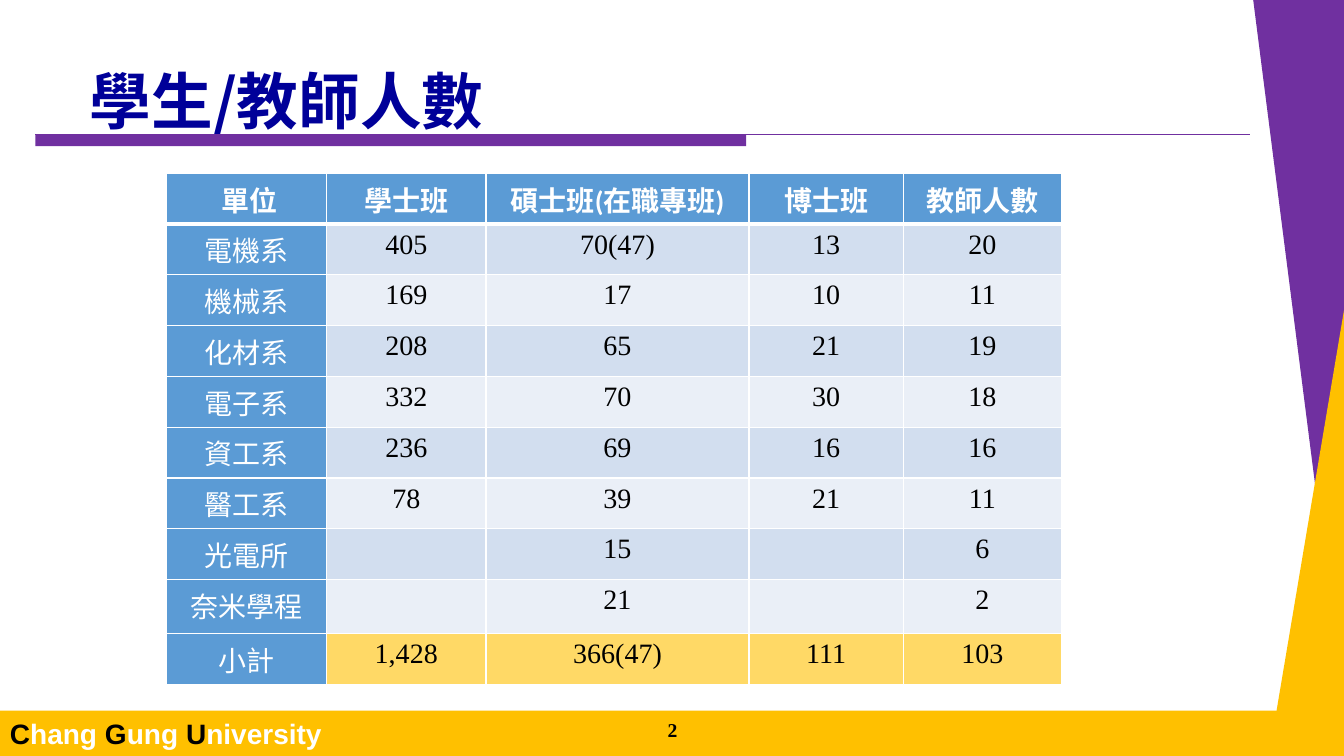
from lxml.etree import SubElement
from pptx import Presentation
from pptx.dml.color import RGBColor
from pptx.enum.shapes import MSO_CONNECTOR as CONN, MSO_SHAPE as SHAPE
from pptx.enum.text import MSO_ANCHOR as ANCHOR, PP_ALIGN as ALIGN
from pptx.oxml.ns import qn
from pptx.util import Inches, Pt

PURPLE = RGBColor(0x70, 0x30, 0xA0)
GOLD = RGBColor(0xFF, 0xC0, 0x00)
NAVY = RGBColor(0x00, 0x00, 0x99)
BLACK = RGBColor(0x00, 0x00, 0x00)
WHITE = RGBColor(0xFF, 0xFF, 0xFF)
BLUE = RGBColor(0x5B, 0x9B, 0xD5)
BAND_DARK = RGBColor(0xD2, 0xDE, 0xEF)
BAND_LIGHT = RGBColor(0xEA, 0xEF, 0xF7)
TOTAL = RGBColor(0xFF, 0xD9, 0x66)

CJK = "Noto Sans CJK SC"
SERIF = "Times New Roman"

COL_WIDTHS = [1.59, 1.58, 2.61, 1.53, 1.57]
ROW_HEIGHTS = [0.38] + [0.47] * 7 + [0.54, 0.47]
HEADCOUNT = [
    [" 單位", "學士班", "碩士班(在職專班)", "博士班", "教師人數"],
    ["電機系", "405", "70(47)", "13", "20"],
    ["機械系", "169", "17", "10", "11"],
    ["化材系", "208", "65", "21", "19"],
    ["電子系", "332", "70", "30", "18"],
    ["資工系", "236", "69", "16", "16"],
    ["醫工系", "78", "39", "21", "11"],
    ["光電所", "", "15", "", "6"],
    ["奈米學程", "", "21", "", "2"],
    ["小計", "1,428", "366(47)", "111", "103"],
]


def add_run(p, text, color, **font):
    r = p.add_run()
    r.text = text
    for name, value in font.items():
        setattr(r.font, name, value)
    r.font.color.rgb = color
    SubElement(r.font._element, qn("a:ea"), typeface=CJK)


def paint(s, color):
    s.fill.solid()
    s.fill.fore_color.rgb = color
    s.line.fill.background()
    s.shadow.inherit = False


def add_bar(slide, x, y, w, h, color):
    s = slide.shapes.add_shape(SHAPE.RECTANGLE, Inches(x), Inches(y),
                               Inches(w), Inches(h))
    paint(s, color)
    return s


def add_triangle(slide, points, color):
    start, *rest = [(Inches(x), Inches(y)) for x, y in points]
    builder = slide.shapes.build_freeform(*start)
    builder.add_line_segments(rest, close=True)
    paint(builder.convert_to_shape(), color)


def add_rule(slide, x1, x2, y):
    s = slide.shapes.add_connector(CONN.STRAIGHT, Inches(x1), Inches(y),
                                   Inches(x2), Inches(y))
    s.line.color.rgb = PURPLE
    s.line.width = Pt(0.75)
    SubElement(s._element.spPr, qn("a:effectLst"))


def add_footer(slide):
    tf = add_bar(slide, 0, 7.05, 13.33, 0.45, GOLD).text_frame
    tf.vertical_anchor = ANCHOR.MIDDLE
    p = tf.paragraphs[0]
    p.alignment = ALIGN.LEFT
    for word in ("Chang ", "Gung ", "University"):
        for text, color in ((word[0], BLACK), (word[1:], WHITE)):
            add_run(p, text, color, name="Arial", size=Pt(20), bold=True)


def add_page_number(slide, number):
    s = slide.shapes.add_textbox(Inches(5.29), Inches(7.07),
                                 Inches(2.76), Inches(0.28))
    tf = s.text_frame
    tf.word_wrap = True
    p = tf.paragraphs[0]
    p.alignment = ALIGN.CENTER
    add_run(p, number, BLACK, name=SERIF, size=Pt(14), bold=True)


def format_title(slide, text):
    s = slide.shapes.title
    box = {"left": 0.79, "top": 0.62, "width": 8.75, "height": 0.83}
    for name, value in box.items():
        setattr(s, name, Inches(value))
    tf = s.text_frame
    tf.vertical_anchor = ANCHOR.MIDDLE
    p = tf.paragraphs[0]
    p.alignment = ALIGN.LEFT
    p.line_spacing = 0.9
    add_run(p, text, NAVY, name=CJK, size=Pt(44), bold=True)


def add_borders(cell, row):
    """Thin white borders, with a thick one under the header row."""
    thick_side = {0: "B", 1: "T"}.get(row)
    for side in "LRTB":
        width = Pt(3 if side == thick_side else 1)
        ln = SubElement(cell._tc.get_or_add_tcPr(), qn(f"a:ln{side}"),
                        w=str(width))
        fill = SubElement(ln, qn("a:solidFill"))
        SubElement(fill, qn("a:srgbClr"), val=str(WHITE))


def cell_fill(row, col):
    if row == 0 or col == 0:
        return BLUE
    if row == len(HEADCOUNT) - 1:
        return TOTAL
    return BAND_DARK if row % 2 else BAND_LIGHT


def add_headcount_table(slide):
    table = slide.shapes.add_table(
        len(HEADCOUNT), len(COL_WIDTHS), Inches(1.65), Inches(1.72),
        Inches(sum(COL_WIDTHS)), Inches(sum(ROW_HEIGHTS))).table
    for column, width in zip(table.columns, COL_WIDTHS):
        column.width = Inches(width)
    for i, (values, height) in enumerate(zip(HEADCOUNT, ROW_HEIGHTS)):
        table.rows[i].height = Inches(height)
        for j, text in enumerate(values):
            cell = table.cell(i, j)
            add_borders(cell, i)
            cell.fill.solid()
            cell.fill.fore_color.rgb = cell_fill(i, j)
            if not text:
                continue
            p = cell.text_frame.paragraphs[0]
            p.alignment = ALIGN.CENTER
            heading = i == 0 or j == 0
            add_run(p, text, WHITE if heading else BLACK,
                    name="Calibri" if heading else SERIF,
                    size=Pt(20), bold=i == 0)


def main():
    prs = Presentation()
    prs.slide_width, prs.slide_height = Inches(13.33), Inches(7.5)
    slide = prs.slides.add_slide(prs.slide_layouts[5])
    add_footer(slide)
    add_triangle(slide, [(13.33, 7.05), (12.43, 0), (13.33, 0)], PURPLE)
    add_triangle(slide, [(13.33, 3.08), (12.66, 7.06), (13.33, 7.06)], GOLD)
    add_bar(slide, 0.35, 1.33, 7.05, 0.12, PURPLE)
    add_rule(slide, 0.35, 12.4, 1.33)
    format_title(slide, "學生/教師人數")
    add_headcount_table(slide)
    add_page_number(slide, "2")
    prs.save("out.pptx")


if __name__ == "__main__":
    main()
